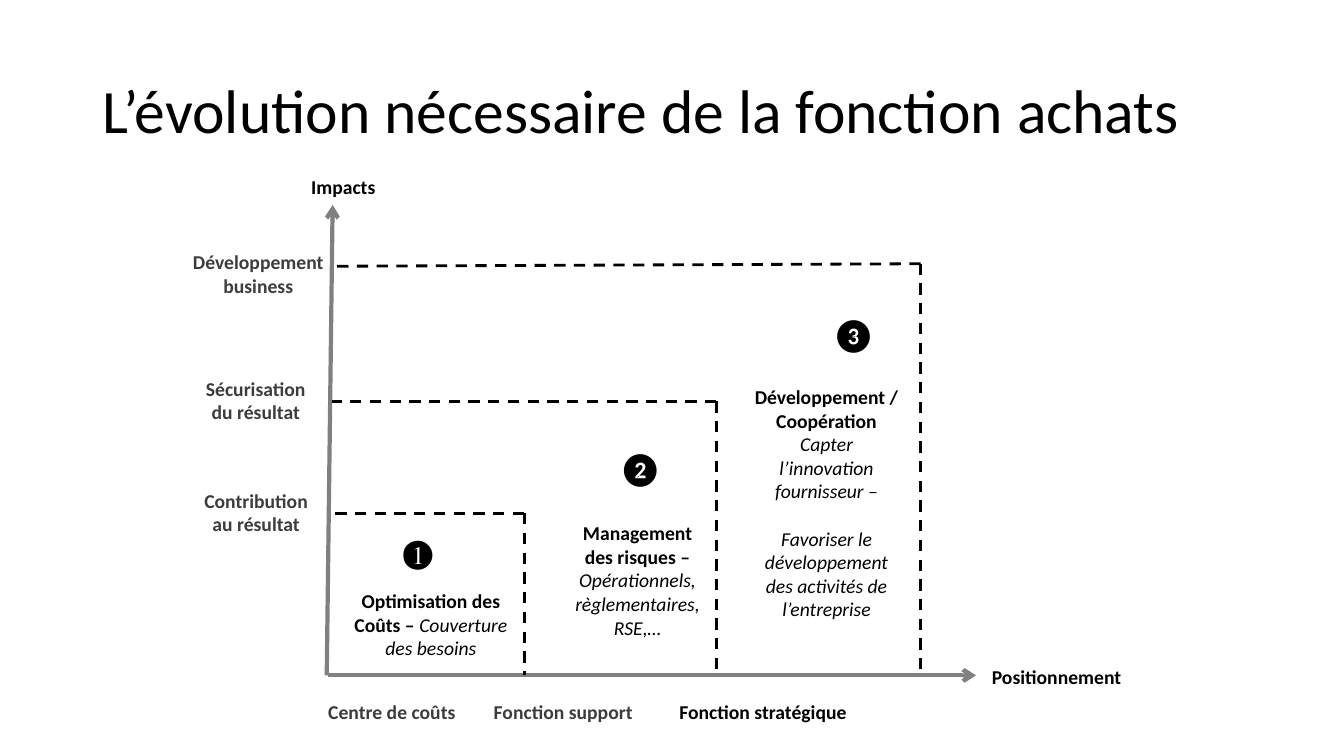
from lxml.etree import SubElement
from pptx import Presentation
from pptx.dml.color import RGBColor
from pptx.enum.dml import MSO_LINE
from pptx.enum.shapes import MSO_CONNECTOR
from pptx.enum.text import MSO_ANCHOR, PP_ALIGN
from pptx.oxml.ns import qn
from pptx.util import Inches, Pt

COLORS = {"ink": "000000", "label": "3C3C3C", "axis": "808080"}


class Board:
    """Draws on one slide, with lengths in cells of a 160 by 90 grid."""

    font, size = "Calibri", 14

    def __init__(self, prs):
        self.s = prs.slides.add_slide(prs.slide_layouts[6])
        self.col = prs.slide_width / 160
        self.row = prs.slide_height / 90

    def cells(self, x, y):
        return round(x * self.col), round(y * self.row)

    def text(self, box, paragraphs, color="ink", size=None, font=None,
             align=PP_ALIGN.LEFT, inset=(0.1, 0.05), gap=0):
        sp = self.s.shapes.add_textbox(*self.cells(*box[:2]), *self.cells(*box[2:]))
        tf = sp.text_frame
        tf.word_wrap = True
        tf.margin_left = tf.margin_right = Inches(inset[0])
        tf.margin_top = tf.margin_bottom = Inches(inset[1])
        for i, runs in enumerate(paragraphs):
            p = tf.paragraphs[0] if i == 0 else tf.add_paragraph()
            p.alignment = align
            if gap and i == len(paragraphs) - 1:
                p.space_before = Pt(gap)
            for words, style in runs:
                r = p.add_run()
                r.text = words
                r.font.name = font or self.font
                r.font.size = Pt(size or self.size)
                r.font.bold = style == "bold"
                r.font.italic = style == "italic"
                r.font.color.rgb = RGBColor.from_string(COLORS[color])
        return tf

    def title(self, box, words):
        tf = self.text(box, [[(words, "plain")]], size=44)
        tf.vertical_anchor = MSO_ANCHOR.MIDDLE
        tf.paragraphs[0].line_spacing = 0.9

    def label(self, box, words, color="ink", **style):
        self.text(box, [[(words, "bold")]], color, **style)

    def centred(self, box, paragraphs, color="ink", gap=0):
        self.text(box, paragraphs, color, align=PP_ALIGN.CENTER,
                  inset=(0.07, 0.03), gap=gap)

    def line(self, start, end, color, width):
        c = self.s.shapes.add_connector(
            MSO_CONNECTOR.STRAIGHT, *self.cells(*start), *self.cells(*end))
        c.line.color.rgb = RGBColor.from_string(COLORS[color])
        c.line.width = Pt(width)
        SubElement(c._element.spPr, qn("a:effectLst"))
        return c

    def axis(self, start, end):
        c = self.line(start, end, "axis", 3)
        SubElement(c.line._get_or_add_ln(), qn("a:tailEnd"), type="arrow")

    def step(self, left, corner, bottom):
        for end in (left, (corner[0], bottom)):
            self.line(corner, end, "ink", 2).line.dash_style = MSO_LINE.DASH


def main():
    prs = Presentation()
    prs.slide_width, prs.slide_height = Inches(13.33), Inches(7.5)
    b = Board(prs)

    b.title((11, 4.8, 138, 17.4), "L’évolution nécessaire de la fonction achats")
    b.axis((38.9, 80.4), (39.6, 24.4))
    b.axis((39.1, 80.4), (116.2, 80.4))
    b.label((36.2, 20.3, 25.2, 6), "Impacts", align=PP_ALIGN.JUSTIFY, inset=(0.07, 0.04))
    b.label((116.9, 78.6, 19.3, 4.1), "Positionnement")

    b.step((39.6, 61.1), (62.4, 61.1), 80.4)
    b.step((39.5, 47.8), (85.3, 47.8), 80.2)
    b.step((40, 31.7), (109.6, 31.4), 80.4)

    for x, y, w, words in (
        (22.4, 57.8, 16.2, "Contribution au résultat"),
        (22.3, 44.5, 16.3, "Sécurisation du résultat"),
        (20.5, 29.4, 20.5, "Développement business"),
    ):
        b.centred((x, y, w, 6.5), [[(words, "bold")]], "label")

    for x, words, color in (
        (37.9, "Centre de coûts", "label"),
        (57.6, "Fonction support", "label"),
        (79.7, "Fonction stratégique", "ink"),
    ):
        b.label((x, 82.7, 24.8, 4.1), words, color)

    for x, y, w, number, font in (
        (46.8, 62.6, 7.1, "❶", "Times New Roman"),
        (72.4, 52.7, 8.9, "❷", "Calibri"),
        (97.8, 36.8, 9.6, "❸", "Calibri"),
    ):
        b.text((x, y, w, 6), [[(number, "plain")]], size=24, font=font)

    b.centred((41.2, 69.8, 20.2, 9.3), [
        [("Optimisation des Coûts – ", "bold"), ("Couverture des besoins", "italic")],
    ])
    b.centred((67, 61.7, 17.8, 15), [
        [("Management des risques –", "bold")],
        [("Opérationnels, règlementaires, RSE,…", "italic")],
    ])
    b.centred((88.9, 45.5, 19, 29.2), [
        [("Développement / Coopération", "bold")],
        [("Capter l’innovation fournisseur –", "italic")],
        [("Favoriser le développement des activités de l’entreprise", "italic")],
    ], gap=17)

    prs.save("out.pptx")


if __name__ == "__main__":
    main()
